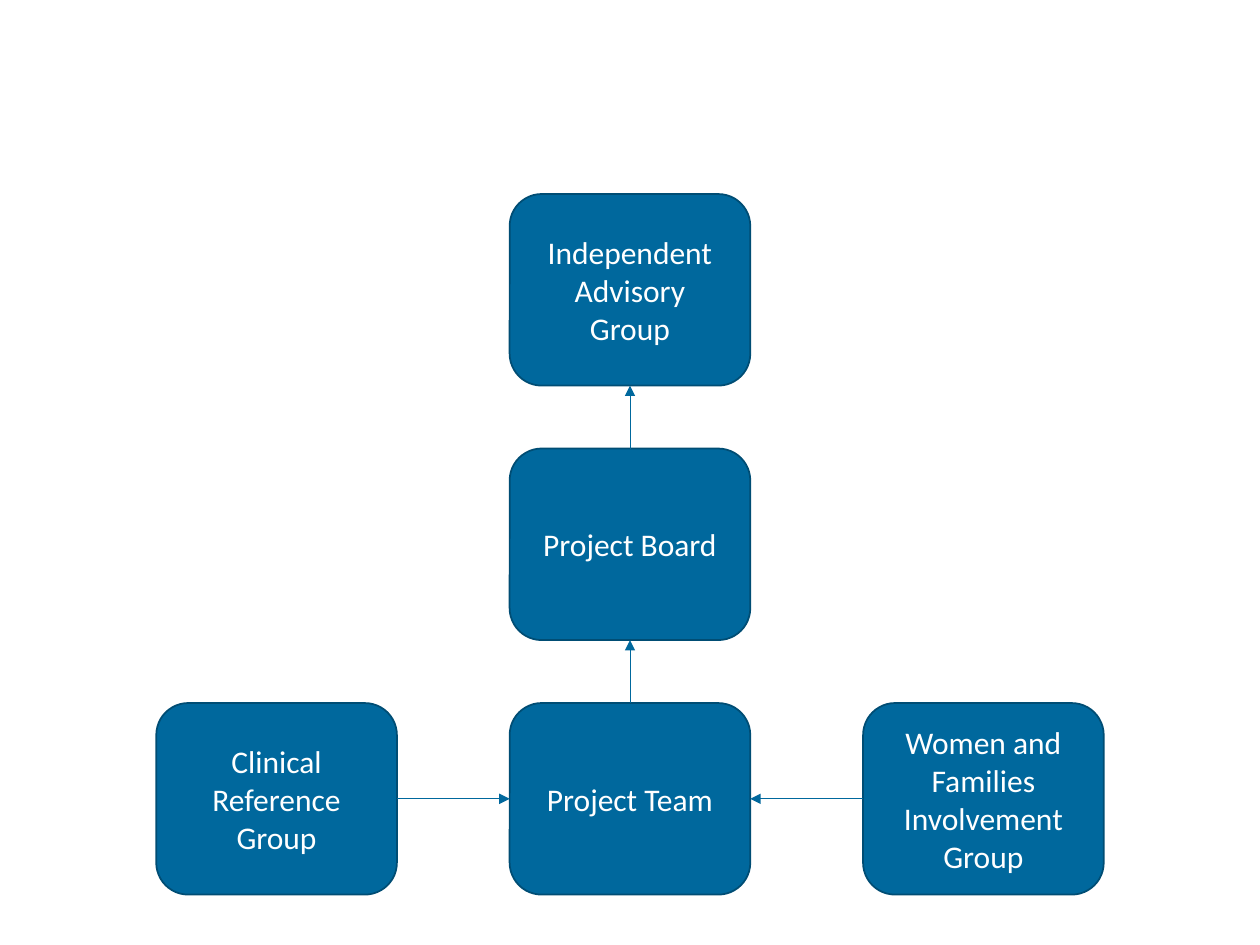
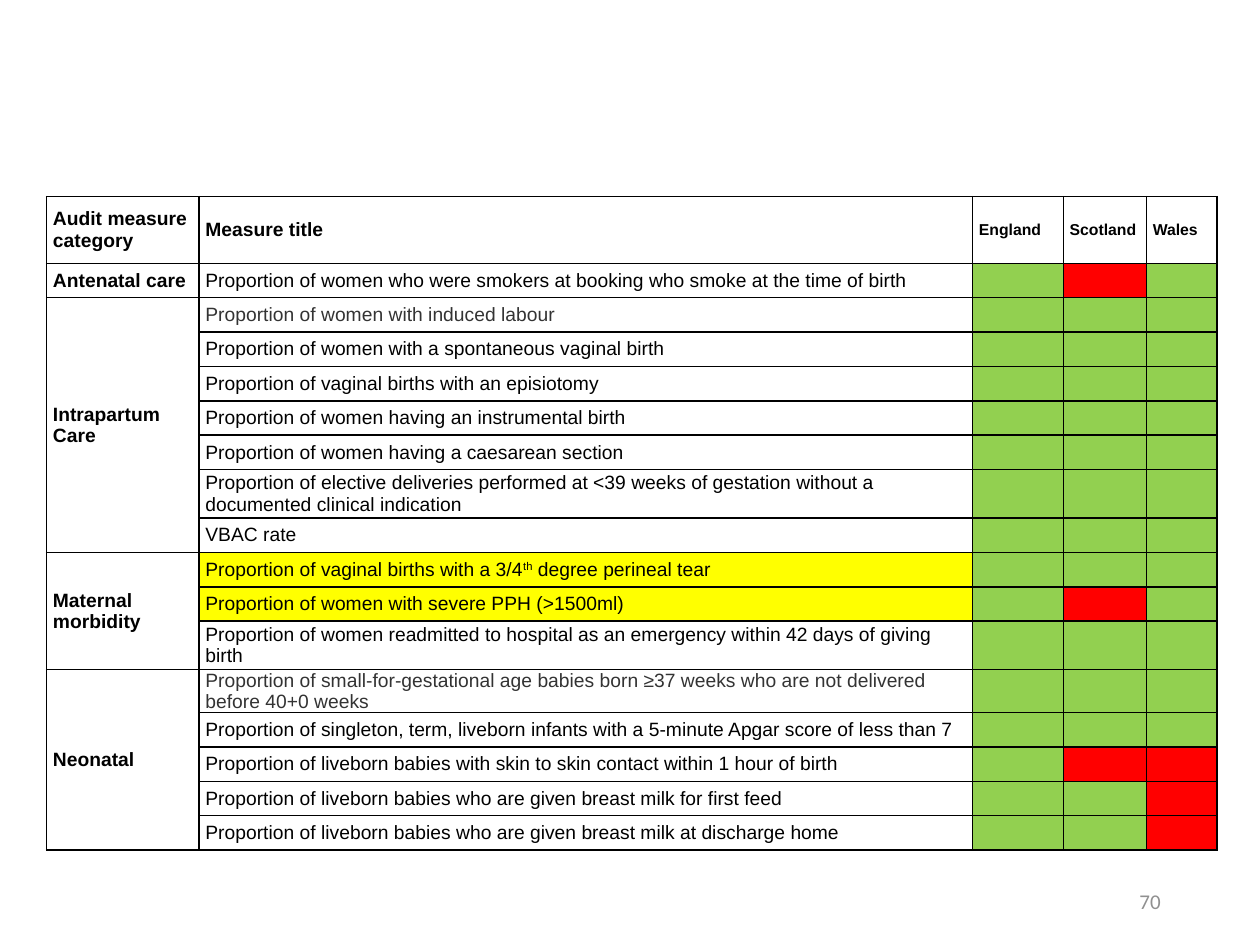
import dataclasses

import pptx
import pptx.dml.color
import pptx.enum.shapes
import pptx.enum.text
import pptx.oxml.ns
import pptx.util
from lxml import etree

Inches, Pt = pptx.util.Inches, pptx.util.Pt
Color = pptx.dml.color.RGBColor.from_string
Align = pptx.enum.text.PP_ALIGN
Anchor = pptx.enum.text.MSO_ANCHOR
qn = pptx.oxml.ns.qn


@dataclasses.dataclass(frozen=True)
class Theme:
    blue: str = "00689D"
    dark_blue: str = "004D74"
    white: str = "FFFFFF"
    black: str = "000000"
    charcoal: str = "333333"
    grey: str = "909090"
    yellow: str = "FFFF00"
    green: str = "92D050"
    red: str = "FF0000"
    body_font: str = "Calibri"
    table_font: str = "Arial"
    group_size: int = 18
    number_size: int = 12
    table_size: int = 11
    nation_size: int = 9
    border: int = 1
    arrow: float = 0.5


theme = Theme()


def set_all(target, formats):
    for attribute, value in formats.items():
        setattr(target, attribute, value)


def write(paragraph, text, color, size, font=theme.body_font, bold=False):
    """Add text to the paragraph; a part between ^ marks is superscript."""
    for index, part in enumerate(text.split("^")):
        run = paragraph.add_run()
        run.text = part
        set_all(run.font, {"name": font, "size": Pt(size), "bold": bold})
        run.font.color.rgb = Color(color)
        if index % 2:
            run._r.get_or_add_rPr().set("baseline", "30000")


deck = pptx.Presentation()
set_all(deck, {"slide_width": Inches(10), "slide_height": Inches(7.5)})
blank = deck.slide_layouts[6]

# Slide 1: project governance, boxes on a grid of three columns and three rows
governance = deck.slides.add_slide(blank)
box_width, box_height = 1.91, 1.52
first_left, column_pitch = 1.24, 2.805
first_top, row_pitch = 1.54, 2.02
groups = {
    "Project Team": (1, 2),
    "Clinical Reference Group": (0, 2),
    "Women and Families Involvement Group": (2, 2),
    "Project Board": (1, 1),
    "Independent Advisory Group": (1, 0),
}
boxes = {}
for group, (column, row) in groups.items():
    box = governance.shapes.add_shape(
        pptx.enum.shapes.MSO_SHAPE.ROUNDED_RECTANGLE,
        Inches(first_left + column * column_pitch),
        Inches(first_top + row * row_pitch),
        Inches(box_width), Inches(box_height))
    box.shadow.inherit = False
    box.fill.solid()
    box.fill.fore_color.rgb = Color(theme.blue)
    box.line.color.rgb = Color(theme.dark_blue)
    box.line.width = Pt(theme.border)
    set_all(box.text_frame, {"word_wrap": True, "vertical_anchor": Anchor.MIDDLE})
    paragraph = box.text_frame.paragraphs[0]
    paragraph.alignment = Align.CENTER
    write(paragraph, group, theme.white, theme.group_size)
    boxes[group] = box

top, left, bottom, right = range(4)
reports = [
    ("Clinical Reference Group", right, "Project Team", left),
    ("Women and Families Involvement Group", left, "Project Team", right),
    ("Project Team", top, "Project Board", bottom),
    ("Project Board", top, "Independent Advisory Group", bottom),
]
for source, source_side, target, target_side in reports:
    arrow = governance.shapes.add_connector(
        pptx.enum.shapes.MSO_CONNECTOR.STRAIGHT, 0, 0, 0, 0)
    arrow.begin_connect(boxes[source], source_side)
    arrow.end_connect(boxes[target], target_side)
    arrow.line.color.rgb = Color(theme.blue)
    arrow.line.width = Pt(theme.arrow)
    etree.SubElement(arrow.line._get_or_add_ln(), qn("a:tailEnd"), type="triangle")
    etree.SubElement(arrow._element.spPr, qn("a:effectLst"))

# Slide 2: availability of each measure by nation (G available, R not available)
audit = deck.slides.add_slide(blank)
headings = ["Audit measure category", "Measure title", "England", "Scotland", "Wales"]
column_widths = [1.21, 6.14, 0.72, 0.66, 0.56]
header_height, row_height = 0.53, 0.273
taller_rows = {7: 0.385, 11: 0.385, 12: 0.34}
charcoal_rows = {2, 12}
highlighted_rows = {9, 10}
status_colors = {"G": theme.green, "R": theme.red}
categories = {
    "Antenatal care": [
        ("Proportion of women who were smokers at booking who smoke at the time of birth",
         "GRG"),
    ],
    "Intrapartum Care": [
        ("Proportion of women with induced labour", "GGG"),
        ("Proportion of women with a spontaneous vaginal birth", "GGG"),
        ("Proportion of vaginal births with an episiotomy", "GGG"),
        ("Proportion of women having an instrumental birth", "GGG"),
        ("Proportion of women having a caesarean section", "GGG"),
        ("Proportion of elective deliveries performed at <39 weeks of gestation "
         "without a documented clinical indication", "GGG"),
        ("VBAC rate", "GGG"),
    ],
    "Maternal morbidity": [
        ("Proportion of vaginal births with a 3/4^th^ degree perineal tear", "GGG"),
        ("Proportion of women with severe PPH (>1500ml)", "GRG"),
        ("Proportion of women readmitted to hospital as an emergency within "
         "42 days of giving birth", "GGG"),
    ],
    "Neonatal": [
        ("Proportion of small-for-gestational age babies born ≥37 weeks who are "
         "not delivered before 40+0 weeks", "GGG"),
        ("Proportion of singleton, term, liveborn infants with a 5-minute Apgar "
         "score of less than 7", "GGG"),
        ("Proportion of liveborn babies with skin to skin contact within 1 hour of birth",
         "GRR"),
        ("Proportion of liveborn babies who are given breast milk for first feed", "GGR"),
        ("Proportion of liveborn babies who are given breast milk at discharge home",
         "GGR"),
    ],
}
row_count = 1 + sum(len(measures) for measures in categories.values())
row_heights = [header_height] + [
    taller_rows.get(row, row_height) for row in range(1, row_count)]
measure_table = audit.shapes.add_table(
    row_count, len(headings), Inches(0.37), Inches(1.56),
    Inches(sum(column_widths)), Inches(sum(row_heights))).table
set_all(measure_table, {"first_row": False, "horz_banding": False})
for column, width in zip(measure_table.columns, column_widths):
    column.width = Inches(width)
for row, height in zip(measure_table.rows, row_heights):
    row.height = Inches(height)

cell_format = {
    "vertical_anchor": Anchor.MIDDLE,
    "margin_left": Inches(0.05), "margin_right": Inches(0.05),
    "margin_top": 0, "margin_bottom": 0,
}
table_rows = [headings]
for category, measures in categories.items():
    first_row = len(table_rows)
    for index, (measure, statuses) in enumerate(measures):
        table_rows.append(["" if index else category, measure, *statuses])
    if len(measures) > 1:
        measure_table.cell(first_row, 0).merge(
            measure_table.cell(len(table_rows) - 1, 0))

for row, texts in enumerate(table_rows):
    for column, text in enumerate(texts):
        cell = measure_table.cell(row, column)
        set_all(cell, cell_format)
        paragraph = cell.text_frame.paragraphs[0]
        fill = status_colors.get(text)
        if text and not fill:
            size = theme.nation_size if column > 1 else theme.table_size
            color = theme.charcoal if row in charcoal_rows and column == 1 else theme.black
            write(paragraph, text, color, size, theme.table_font,
                  bold=row == 0 or column == 0)
        else:
            etree.SubElement(paragraph._p, qn("a:endParaRPr"),
                             sz=str(theme.table_size * 100))
        if column == 1 and row in highlighted_rows:
            fill = theme.yellow
        if fill:
            cell.fill.solid()
            cell.fill.fore_color.rgb = Color(fill)
        else:
            cell.fill.background()
        for position, side in enumerate(["lnL", "lnR", "lnT", "lnB"]):
            edge = etree.Element(qn("a:" + side), w=str(Pt(theme.border)))
            line_fill = etree.SubElement(edge, qn("a:solidFill"))
            etree.SubElement(line_fill, qn("a:srgbClr"), val=theme.black)
            cell._tc.get_or_add_tcPr().insert(position, edge)

page_number = audit.shapes.add_textbox(
    Inches(7.06), Inches(6.95), Inches(2.25), Inches(0.4)).text_frame
set_all(page_number, {"word_wrap": True, "vertical_anchor": Anchor.MIDDLE})
page_number.paragraphs[0].alignment = Align.RIGHT
write(page_number.paragraphs[0], "70", theme.grey, theme.number_size)

deck.save("out.pptx")
